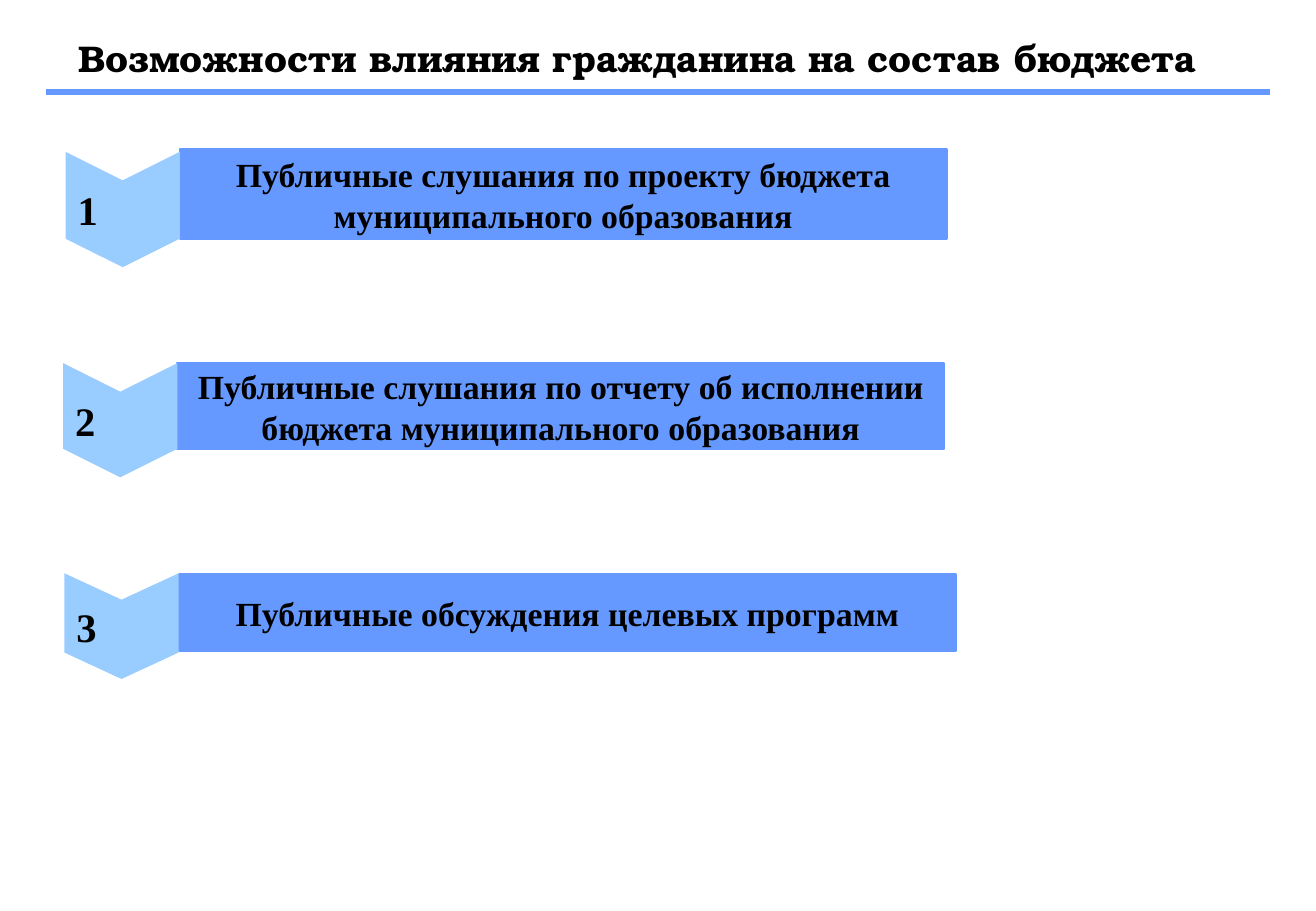
from pptx import Presentation
from pptx.dml.color import RGBColor
from pptx.enum.shapes import MSO_CONNECTOR, MSO_SHAPE as SHAPE
from pptx.enum.text import MSO_ANCHOR as ANCHOR, PP_ALIGN as ALIGN
from pptx.util import Inches, Pt
from lxml.etree import SubElement
from pptx.oxml.ns import qn

BLUE = RGBColor(0x66, 0x99, 0xFF)
LIGHT_BLUE = RGBColor(0x99, 0xCC, 0xFF)
BLACK = RGBColor(0, 0, 0)
TITLE_FONT = "TeX Gyre Bonum"
BODY_FONT = "Times New Roman"
TITLE = "Возможности влияния гражданина на состав бюджета"

# Banner box (left, top, width, height), chevron top and length, wording
STEPS = [
    ((1.48, 1.23, 6.31, 0.74), 1.25, 0.95,
     "Публичные слушания по проекту бюджета муниципального образования"),
    ((1.46, 2.99, 6.31, 0.71), 2.99, 0.94,
     "Публичные слушания по отчету об исполнении бюджета муниципального образования"),
    ((1.47, 4.73, 6.4, 0.63), 4.72, 0.87, "Публичные обсуждения целевых программ"),
]
CHEVRON_WIDTH = 0.94


def write(shape, text, size, font, align):
    frame = shape.text_frame
    frame.word_wrap = True
    frame.vertical_anchor = ANCHOR.MIDDLE
    frame.text = text
    para = frame.paragraphs[0]
    para.alignment = align
    para.font.size = Pt(size)
    for span in para.runs:
        span.font.name = font
        span.font.size = Pt(size)
        span.font.bold = True
        span.font.color.rgb = BLACK


def add_filled(page, kind, box, color):
    shape = page.shapes.add_shape(kind, *map(Inches, box))
    shape.shadow.inherit = False
    shape.fill.solid()
    shape.fill.fore_color.rgb = color
    shape.line.fill.background()
    return shape


def add_header(page, left, top, width, height):
    title = page.shapes.add_textbox(*map(Inches, (left, top, width, height)))
    write(title, TITLE, 22, TITLE_FONT, ALIGN.LEFT)
    rule_y = Inches(top + height + 0.06)
    rule = page.shapes.add_connector(
        MSO_CONNECTOR.STRAIGHT, Inches(left - 0.17), rule_y,
        Inches(left + width + 0.15), rule_y)
    rule.line.color.rgb = BLUE
    rule.line.width = Pt(3.75)
    SubElement(rule.element.spPr, qn("a:effectLst"))


def add_step(page, number, box, chevron_top, length, text):
    """Place a banner in the box and a numbered chevron at its left edge."""
    banner = add_filled(page, SHAPE.RECTANGLE, box, BLUE)
    banner.line.color.rgb = BLUE
    banner.line.width = Pt(1.25)
    write(banner, text, 20, BODY_FONT, ALIGN.CENTER)

    # The quarter turn swaps the sides, so the box is set about its centre
    center_x = box[0] - CHEVRON_WIDTH / 2
    chevron = add_filled(
        page, SHAPE.CHEVRON,
        (center_x - length / 2, chevron_top + (length - CHEVRON_WIDTH) / 2,
         length, CHEVRON_WIDTH), LIGHT_BLUE)
    chevron.rotation = 90
    chevron.adjustments[0] = 0.25
    write(chevron, str(number), 24, BODY_FONT, ALIGN.LEFT)
    chevron.element.txBody.bodyPr.set("vert", "vert270")


def main():
    deck = Presentation()
    deck.slide_width, deck.slide_height = Inches(10.83), Inches(7.5)
    page = deck.slides.add_slide(deck.slide_layouts[6])
    add_header(page, 0.55, 0.25, 9.75, 0.45)
    for number, step in enumerate(STEPS, 1):
        add_step(page, number, *step)
    deck.save("out.pptx")


if __name__ == "__main__":
    main()
